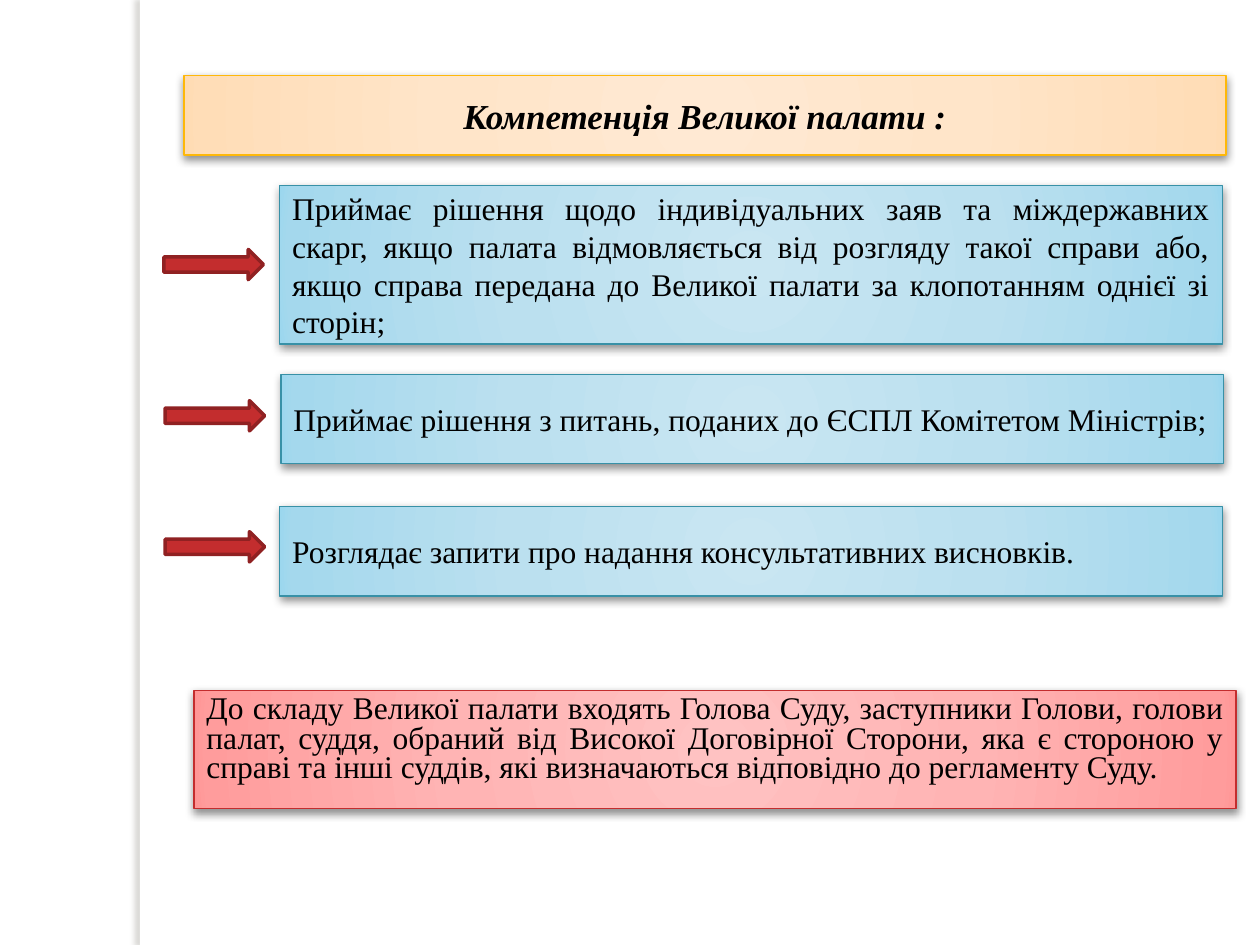
"""Build the slide on the competence of the Grand Chamber."""
from lxml import etree
from pptx import Presentation
from pptx.dml.color import RGBColor
from pptx.enum import shapes, text
from pptx.oxml import ns
from pptx.util import Inches, Pt

COLORS = {
    "white": "FFFFFF", "text": "000000", "shadow": "000000", "edge": "736F63",
    "arrow": "C32D2E", "arrow_line": "902122",
    "orange_line": "FEB80A", "red_line": "C32D2E", "blue_line": "3891A7",
}
GRADIENTS = {
    "orange": ["FFE9D3", "FFE5C9", "FFDDB7", "FFDBB2"],
    "red": ["FFC2C2", "FFB4B4", "FF9C9C", "FF9595"],
    "blue": ["C9E6F2", "BBE0EF", "A4D8ED", "9BD7EE"],
}
STOPS = [0, 50, 97, 100]
A = ns.nsdecls("a")


def add_shape(kind, left, top, width, height):
    sp = s.shapes.add_shape(kind, Inches(left), Inches(top), Inches(width), Inches(height))
    sp.shadow.inherit = False
    return sp


def add_shadow(sp, color, alpha, blur, dist, angle):
    effects = sp._element.spPr.find(ns.qn("a:effectLst"))
    effects.append(etree.fromstring(
        f'<a:outerShdw {A} blurRad="{Pt(blur)}" dist="{Pt(dist)}" dir="{angle * 60000}" '
        f'algn="ctr" rotWithShape="0"><a:srgbClr val="{COLORS[color]}">'
        f'<a:alpha val="{alpha * 1000}"/></a:srgbClr></a:outerShdw>'))


prs = Presentation()
prs.slide_width, prs.slide_height = Inches(10), Inches(7.5)
s = prs.slides.add_slide(prs.slide_layouts[6])

strip = add_shape(shapes.MSO_SHAPE.RECTANGLE, 1.11, 0, 0.08, 7.5)
strip.fill.solid()
strip.fill.fore_color.rgb = RGBColor.from_string(COLORS["white"])
strip.line.fill.background()
add_shadow(strip, "edge", 25, 3, 3, 180)

boxes = [
    ("orange", 1.46, 0.6, 8.27, 0.63, "Компетенція Великої палати :"),
    ("red", 1.54, 5.48, 8.27, 0.94,
     "До складу Великої палати входять Голова Суду, заступники Голови, голови палат, "
     "суддя, обраний від Високої Договірної Сторони, яка є стороною у справі та інші "
     "суддів, які визначаються відповідно до регламенту Суду."),
    ("blue", 2.22, 1.47, 7.48, 1.26,
     "Приймає рішення щодо індивідуальних заяв та міждержавних скарг, якщо палата "
     "відмовляється від розгляду такої справи або, якщо справа передана до Великої "
     "палати за клопотанням однієї зі сторін;"),
    ("blue", 2.23, 2.97, 7.48, 0.71,
     "Приймає рішення з питань, поданих до ЄСПЛ Комітетом Міністрів;"),
    ("blue", 2.22, 4.02, 7.48, 0.71,
     "Розглядає запити про надання консультативних висновків."),
]
for name, left, top, width, height, words in boxes:
    is_title, is_note = name == "orange", name == "red"
    sp = add_shape(shapes.MSO_SHAPE.RECTANGLE, left, top, width, height)
    sp.fill.gradient()
    grad = sp._element.spPr.find(ns.qn("a:gradFill"))
    for child in list(grad):
        grad.remove(child)
    stops = "".join(f'<a:gs pos="{pos * 1000}"><a:srgbClr val="{color}"/></a:gs>'
                    for pos, color in zip(STOPS, GRADIENTS[name]))
    grad.append(etree.fromstring(f"<a:gsLst {A}>{stops}</a:gsLst>"))
    grad.append(etree.fromstring(
        f'<a:path {A} path="circle">'
        '<a:fillToRect l="50000" t="50000" r="50000" b="50000"/></a:path>'))
    sp.line.color.rgb = RGBColor.from_string(COLORS[f"{name}_line"])
    sp.line.width = Pt(0.75)
    add_shadow(sp, "shadow", 43, 5, 2, 90)

    tf = sp.text_frame
    tf.word_wrap = True
    tf.vertical_anchor = text.MSO_ANCHOR.TOP if is_note else text.MSO_ANCHOR.MIDDLE
    p = tf.paragraphs[0]
    p.alignment = text.PP_ALIGN.CENTER if is_title else text.PP_ALIGN.JUSTIFY
    if is_note:
        p.line_spacing = Pt(16.8)
    r = p.add_run()
    r.text = words
    r.font.name = "Times New Roman"
    r.font.size = Pt(20 if is_title else 18)
    r.font.bold = r.font.italic = is_title
    r.font.color.rgb = RGBColor.from_string(COLORS["text"])

for left, top in [(1.3, 1.98), (1.31, 3.18), (1.31, 4.22)]:
    arrow = add_shape(shapes.MSO_SHAPE.RIGHT_ARROW, left, top, 0.79, 0.24)
    arrow.fill.solid()
    arrow.fill.fore_color.rgb = RGBColor.from_string(COLORS["arrow"])
    arrow.line.color.rgb = RGBColor.from_string(COLORS["arrow_line"])
    arrow.line.width = Pt(2)

prs.save("out.pptx")
